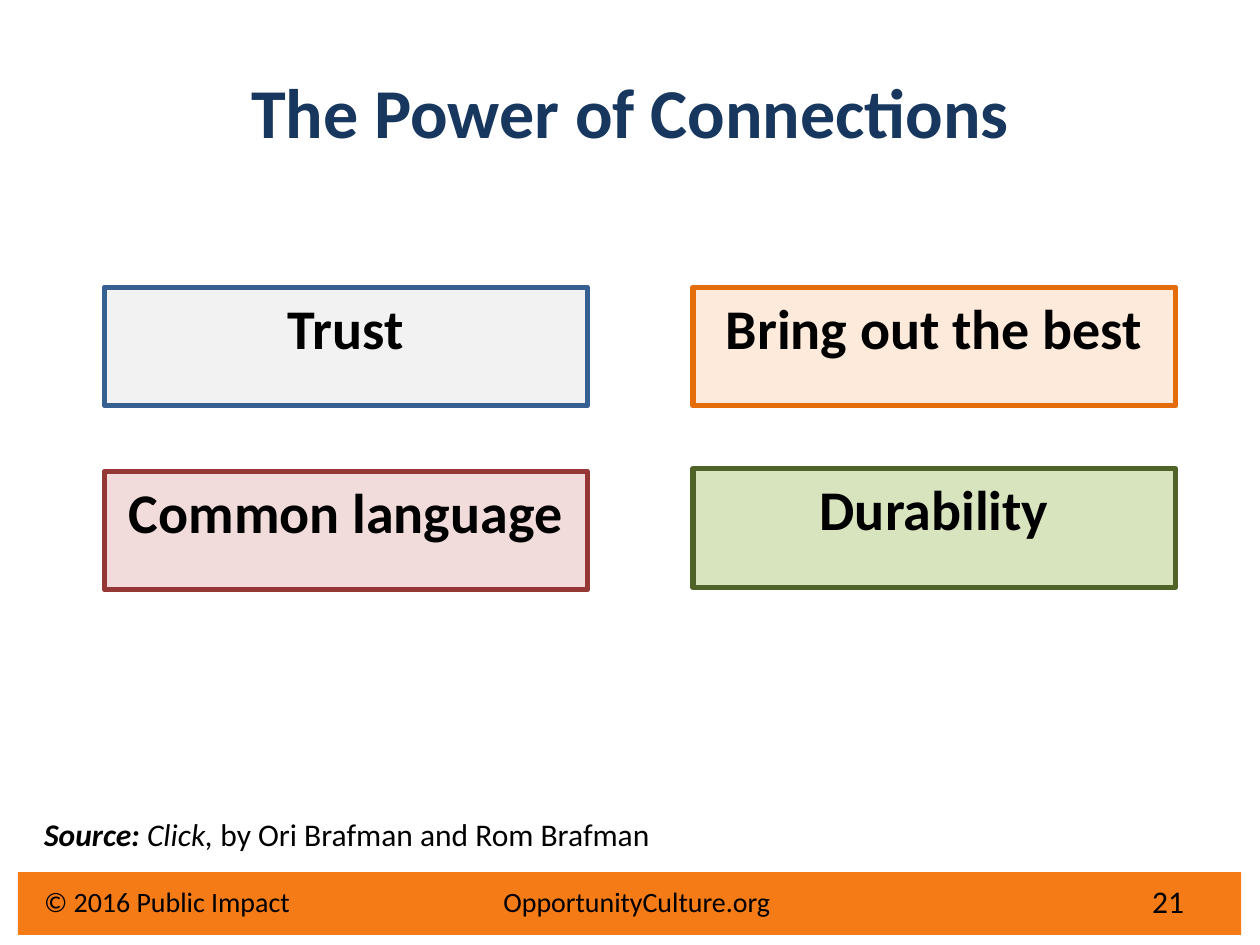
from lxml.etree import SubElement
from pptx import Presentation
from pptx.dml.color import RGBColor
from pptx.enum.shapes import MSO_SHAPE
from pptx.enum.text import MSO_ANCHOR, PP_ALIGN
from pptx.oxml.ns import qn
from pptx.util import Cm, Pt

FONT = "Calibri"
COLORS = {
    "title": "17375E", "text": "000000", "footer": "F57B17",
    "blue": "376092", "gray": "F2F2F2",
    "red": "953735", "pink": "F2DCDB",
    "orange": "E46C0A", "peach": "FDEADA",
    "green": "4F6228", "lime": "D7E4BD",
}


def color(name):
    return RGBColor.from_string(COLORS[name])


def format_run(run, size, name="text", bold=False, italic=False):
    run.font.name = FONT
    run.font.size = Pt(size)
    run.font.bold = bold
    run.font.italic = italic
    run.font.color.rgb = color(name)


def add_rectangle(slide, box, fill):
    rectangle = slide.shapes.add_shape(MSO_SHAPE.RECTANGLE, *map(Cm, box))
    rectangle.shadow.inherit = False
    rectangle.fill.solid()
    rectangle.fill.fore_color.rgb = color(fill)
    rectangle.line.fill.background()
    return rectangle


def add_label(slide, box, anchor=MSO_ANCHOR.TOP):
    frame = slide.shapes.add_textbox(*map(Cm, box)).text_frame
    frame.word_wrap = True
    frame.vertical_anchor = anchor
    return frame.paragraphs[0]


def place_title(slide, box, wording):
    title = slide.shapes.title
    title.left, title.top, title.width, title.height = map(Cm, box)
    title.text_frame.text = wording
    title.text_frame.vertical_anchor = MSO_ANCHOR.MIDDLE
    heading = title.text_frame.paragraphs[0]
    heading.alignment = PP_ALIGN.CENTER
    format_run(heading.runs[0], 40, "title", bold=True)


def add_benefit(slide, box, wording, outline, fill):
    benefit = add_rectangle(slide, box, fill)
    benefit.line.color.rgb = color(outline)
    benefit.line.width = Pt(3)
    # Rounded line joins
    SubElement(benefit.element.spPr.find(qn("a:ln")), qn("a:round"))
    frame = benefit.text_frame
    frame.text = wording
    frame.word_wrap = True
    frame.vertical_anchor = MSO_ANCHOR.TOP
    frame.paragraphs[0].alignment = PP_ALIGN.CENTER
    format_run(frame.paragraphs[0].runs[0], 32, bold=True)


def add_benefits(slide, box):
    left, top, width, height = box
    card_width, card_height = 9.73, 2.39
    right = left + width - card_width
    bottom = top + height - card_height
    benefits = [
        (left, top, "Trust", "blue", "gray"),
        (left, bottom, "Common language", "red", "pink"),
        (right, top, "Bring out the best", "orange", "peach"),
        (right, bottom - 0.05, "Durability", "green", "lime"),
    ]
    for x, y, wording, outline, fill in benefits:
        add_benefit(slide, (x, y, card_width, card_height),
                    wording, outline, fill)


def add_source(slide, box):
    source = add_label(slide, box)
    parts = [("Source: ", True, True), ("Click,", False, True),
             (" by Ori Brafman and Rom Brafman", False, False)]
    for wording, bold, italic in parts:
        run = source.add_run()
        run.text = wording
        format_run(run, 18, bold=bold, italic=italic)


def add_footer(slide, box):
    left, top, width, height = box
    add_rectangle(slide, box, "footer")

    # Copyright and web address, parted by a tab stop
    credit = add_label(slide, (left + 0.28, top + 0.12, 17.58, 0.94))
    tabs = SubElement(credit._p.get_or_add_pPr(), qn("a:tabLst"))
    SubElement(tabs, qn("a:tab"), pos=str(Cm(9.26)), algn="l")
    credit.text = "© 2016 Public Impact\tOpportunityCulture.org"
    for run in credit.runs:
        format_run(run, 16)

    # Slide number
    number = add_label(slide, (left + width - 2.6, top + 0.08, 1.7, 1.02),
                       MSO_ANCHOR.MIDDLE)
    number.text = "21"
    number.alignment = PP_ALIGN.RIGHT
    format_run(number.runs[0], 18)


def main():
    deck = Presentation()
    deck.slide_width, deck.slide_height = Cm(25.4), Cm(19.05)
    slide = deck.slides.add_slide(deck.slide_layouts[5])
    add_footer(slide, (0.36, 17.58, 24.66, 1.27))
    place_title(slide, (1.27, 0.64, 22.86, 3.18), "The Power of Connections")
    add_source(slide, (0.64, 16.31, 16.31, 1.02))
    add_benefits(slide, (2.11, 5.79, 21.59, 6.1))
    deck.save("out.pptx")


if __name__ == "__main__":
    main()
